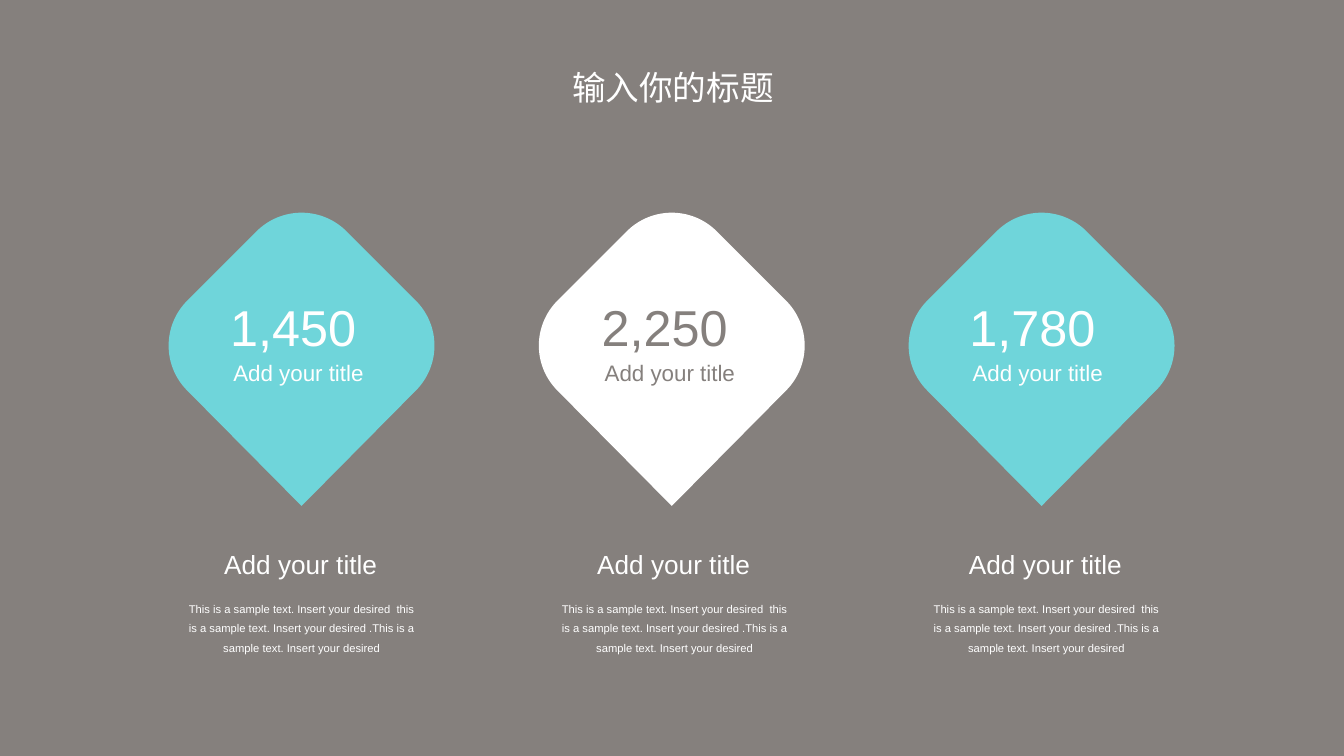
from math import cos, radians, sin, tan

from lxml.etree import SubElement
from pptx import Presentation
from pptx.dml.color import RGBColor
from pptx.enum.shapes import MSO_SHAPE as Preset
from pptx.enum.text import MSO_AUTO_SIZE as AutoSize, PP_ALIGN as Align
from pptx.oxml.ns import qn
from pptx.util import Cm, Pt

TITLE = "输入你的标题"
CAPTION = "Add your title"
SAMPLE = (
    "This is a sample text. Insert your desired  this is a sample text. "
    "Insert your desired .This is a sample text. Insert your desired"
)
COLUMNS = [
    {"number": "1,450", "badge": "teal", "ink": "white",
     "center": 7.6, "number_left": 5.55, "body_left": 4.39},
    {"number": "2,250", "badge": "white", "ink": "gray",
     "center": 16.93, "number_left": 14.91, "body_left": 13.79},
    {"number": "1,780", "badge": "teal", "ink": "white",
     "center": 26.25, "number_left": 24.18, "body_left": 23.16},
]
THEME = {
    "gray": RGBColor(0x85, 0x80, 0x7D),
    "teal": RGBColor(0x6F, 0xD5, 0xDA),
    "white": RGBColor(0xFF, 0xFF, 0xFF),
    "latin": "Arial",
    "chinese": "Noto Sans CJK SC",
    "title": 24,
    "number": 36,
    "label": 16,
    "heading": 18.7,
    "body": 8,
}
SLIDE_WIDTH, SLIDE_HEIGHT = 33.87, 19.05
BADGE_TOP, BADGE_HALF, BADGE_HEIGHT, CORNER = 5.36, 3.35, 7.39, 1.6
ARC_STEP = 45


def paint(shape, color):
    shape.shadow.inherit = False
    shape.fill.solid()
    shape.fill.fore_color.rgb = THEME[color]


def add_text(shapes, text, box, size, ink="white", font="latin", wrap=False):
    shape = shapes.add_textbox(*(Cm(length) for length in box))
    frame = shape.text_frame
    frame.text = text
    frame.word_wrap = wrap
    frame.auto_size = AutoSize.SHAPE_TO_FIT_TEXT
    paragraph = frame.paragraphs[0]
    run = paragraph.runs[0]
    run.font.size = Pt(THEME[size])
    run.font.color.rgb = THEME[ink]
    run.font.name = THEME[font]
    SubElement(run.font._element, qn("a:ea")).set("typeface", THEME[font])
    return paragraph


def arc_point(corner, angle, pull=0):
    x, y = corner
    turn = radians(angle)
    return (
        Cm(x + CORNER * (cos(turn) - pull * sin(turn))),
        Cm(y + CORNER * (sin(turn) + pull * cos(turn))),
    )


def badge_outline(center):
    reach = BADGE_HALF - CORNER
    middle = BADGE_TOP + BADGE_HALF
    pull = 4 / 3 * tan(radians(ARC_STEP / 4))
    corners = [
        ((center - reach, middle), 135),
        ((center, middle - reach), 225),
        ((center + reach, middle), 315),
    ]
    points, curves = [], {}
    for corner, start in corners:
        points.append(arc_point(corner, start))
        for angle in (start, start + ARC_STEP):
            end = angle + ARC_STEP
            curves[len(points)] = [
                arc_point(corner, angle, pull),
                arc_point(corner, end, -pull),
            ]
            points.append(arc_point(corner, end))
    points.append((Cm(center), Cm(BADGE_TOP + BADGE_HEIGHT)))
    return points, curves


def add_badge(slide, center, color):
    points, curves = badge_outline(center)
    builder = slide.shapes.build_freeform(*points[0])
    builder.add_line_segments(points[1:], close=True)
    shape = builder.convert_to_shape()
    segments = list(shape._element.iter(qn("a:lnTo")))
    for index, controls in curves.items():
        segment = segments[index - 1]
        curve = segment.makeelement(qn("a:cubicBezTo"))
        for x, y in controls:
            point = SubElement(curve, qn("a:pt"))
            point.set("x", str(x - shape.left))
            point.set("y", str(y - shape.top))
        curve.append(segment[0])
        segment.getparent().replace(segment, curve)
    paint(shape, color)
    shape.line.fill.background()


def add_badge_text(slide, column):
    left, ink = column["number_left"], column["ink"]
    shapes = slide.shapes.add_group_shape().shapes
    add_text(shapes, CAPTION, (left + 0.08, 8.92, 3.84, 0.94), "label", ink)
    add_text(shapes, column["number"], (left, 7.34, 3.71, 1.8), "number", ink)


def add_description(slide, left):
    add_text(slide.shapes, CAPTION, (left + 1.01, 13.69, 4.39, 1.07), "heading")
    body = add_text(slide.shapes, SAMPLE, (left, 14.89, 6.43, 1.75), "body", wrap=True)
    body.alignment = Align.CENTER
    body.line_spacing = Pt(14)


def main():
    presentation = Presentation()
    presentation.slide_width = Cm(SLIDE_WIDTH)
    presentation.slide_height = Cm(SLIDE_HEIGHT)
    slide = presentation.slides.add_slide(presentation.slide_layouts[6])
    background = slide.shapes.add_shape(
        Preset.RECTANGLE, 0, 0, Cm(SLIDE_WIDTH), Cm(SLIDE_HEIGHT)
    )
    paint(background, "gray")
    background.line.color.rgb = THEME["gray"]
    background.line.width = Pt(1)
    title_box = (14.17, 1.57, 6.71, 1.27)
    add_text(slide.shapes, TITLE, title_box, "title", font="chinese", wrap=True)
    for column in COLUMNS:
        add_badge(slide, column["center"], column["badge"])
    for column in COLUMNS:
        add_badge_text(slide, column)
    for column in COLUMNS:
        add_description(slide, column["body_left"])
    presentation.save("out.pptx")


if __name__ == "__main__":
    main()
